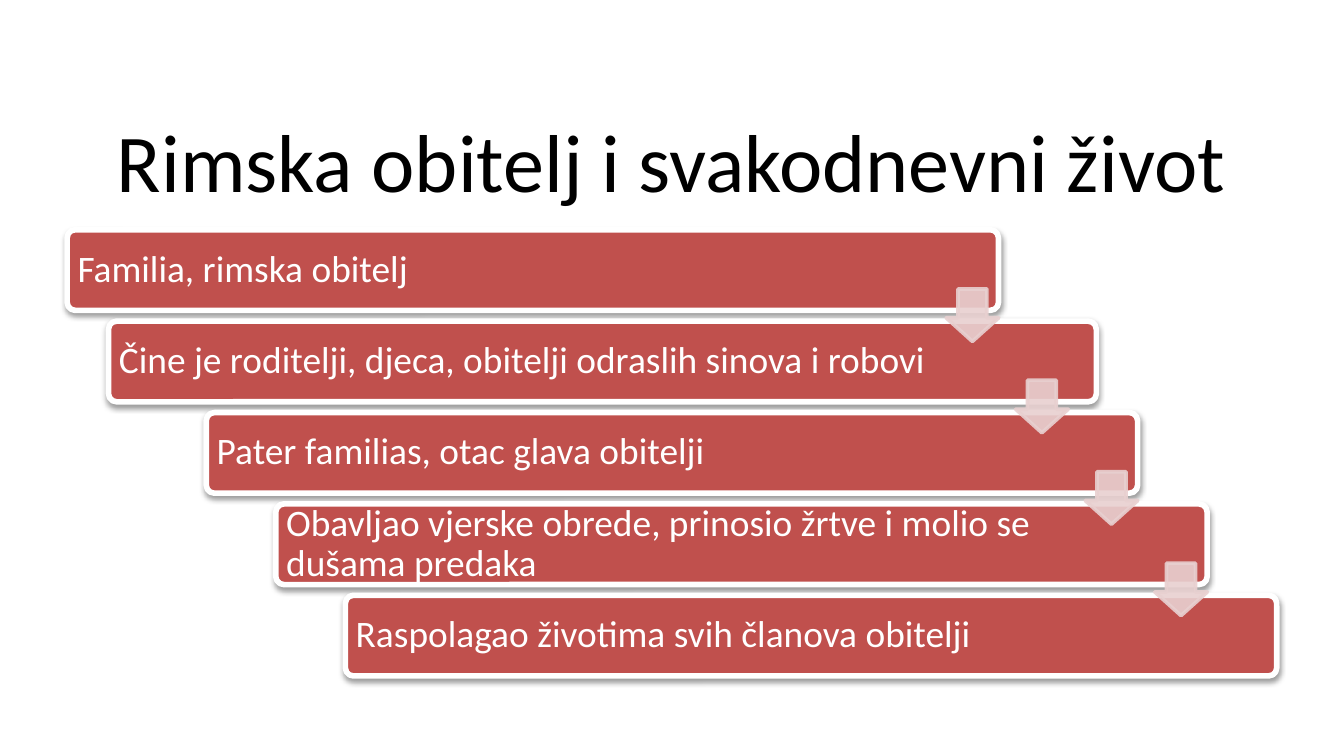
from lxml.etree import SubElement
from pptx import Presentation
from pptx.dml.color import RGBColor
from pptx.enum.shapes import MSO_SHAPE
from pptx.enum.text import MSO_ANCHOR, PP_ALIGN
from pptx.oxml.ns import qn
from pptx.util import Inches, Pt

WIDE = 10
HIGH = WIDE * 9 / 16
MARGIN = WIDE * 0.05
RED, PINK, WHITE, BLACK = "C0504D", "E8D0D0", "FFFFFF", "000000"
BAR_W, BAR_H, ARROW = 6.93, 0.6, 0.39
PAD = 0.06

# Text, width of its column, and any shift and extra width of the bar
STEPS = [
    ("Familia, rimska obitelj", 6.25, 0, 0),
    ("Čine je roditelji, djeca, obitelji odraslih sinova i robovi", 6.39, -0.21, 0.42),
    ("Pater familias, otac glava obitelji", 6.02, 0, 0),
    ("Obavljao vjerske obrede, prinosio žrtve i molio se dušama predaka", 6.02, 0, 0),
    ("Raspolagao životima svih članova obitelji", 6.02, 0, 0),
]
STEP_X = (WIDE - 2 * MARGIN - BAR_W) / (len(STEPS) - 1)
STEP_Y = 0.68


def color(code):
    return RGBColor.from_string(code)


def fade(node, share):
    """Set the opacity of the colour inside an XML node."""
    for tint in node.iter(qn("a:srgbClr")):
        SubElement(tint, qn("a:alpha"), val=str(int(share * 100000)))


def cast(shape):
    """Give a shape a soft shadow below it."""
    effects = shape.element.spPr.find(qn("a:effectLst"))
    outer = SubElement(effects, qn("a:outerShdw"), blurRad=str(Pt(3.1)),
                       dist=str(Pt(1.6)), dir="5400000", rotWithShape="0")
    SubElement(outer, qn("a:srgbClr"), val=BLACK)
    fade(outer, 0.38)


def write(shape, text, size, code, align, pads):
    frame = shape.text_frame
    frame.word_wrap = True
    frame.vertical_anchor = MSO_ANCHOR.MIDDLE
    (frame.margin_left, frame.margin_top,
     frame.margin_right, frame.margin_bottom) = map(Inches, pads)
    para = frame.paragraphs[0]
    para.alignment = align
    para.line_spacing = 0.9
    run = para.add_run()
    run.text = text
    run.font.name = "Calibri"
    run.font.size = Pt(size)
    run.font.color.rgb = color(code)


def add_shape(slide, kind, box, fill, edge, weight, adjust):
    shape = slide.shapes.add_shape(kind, *map(Inches, box))
    shape.shadow.inherit = False
    shape.fill.solid()
    shape.fill.fore_color.rgb = color(fill)
    shape.line.color.rgb = color(edge)
    shape.line.width = Pt(weight)
    for place, value in enumerate(adjust):
        shape.adjustments[place] = value
    return shape


def add_title(slide, box):
    title = slide.shapes.add_textbox(*map(Inches, box))
    write(title, "Rimska obitelj i svakodnevni život", 44, BLACK,
          PP_ALIGN.CENTER, (0.1, 0.05, 0.1, 0.05))


def add_bar(slide, box, text, column):
    bar = add_shape(slide, MSO_SHAPE.ROUNDED_RECTANGLE, box, RED, WHITE, 3, [0.1])
    cast(bar)
    right = box[2] - column + PAD
    write(bar, text, 20, WHITE, PP_ALIGN.LEFT, (PAD, PAD, right, PAD))


def add_arrow(slide, left, top):
    arrow = add_shape(slide, MSO_SHAPE.DOWN_ARROW, (left, top, ARROW, ARROW),
                      PINK, PINK, 2, [0.55, 0.45])
    fade(arrow.element.spPr, 0.9)


def add_stairs(slide, left, top):
    """Draw the bars stepping down, then the arrows that join them."""
    spots = [(left + STEP_X * i, top + STEP_Y * i) for i in range(len(STEPS))]
    for (x, y), (text, column, shift, extra) in zip(spots, STEPS):
        add_bar(slide, (x + shift, y, BAR_W + extra, BAR_H), text, column)
    for x, y in spots[:-1]:
        add_arrow(slide, x + BAR_W - ARROW, y + 0.44)


def main():
    deck = Presentation()
    deck.slide_width, deck.slide_height = Inches(WIDE), Inches(HIGH)
    slide = deck.slides.add_slide(deck.slide_layouts[6])
    add_title(slide, (MARGIN, HIGH * 0.15, WIDE - 2 * MARGIN, 0.78))
    add_stairs(slide, MARGIN, 1.71)
    deck.save("out.pptx")


if __name__ == "__main__":
    main()
